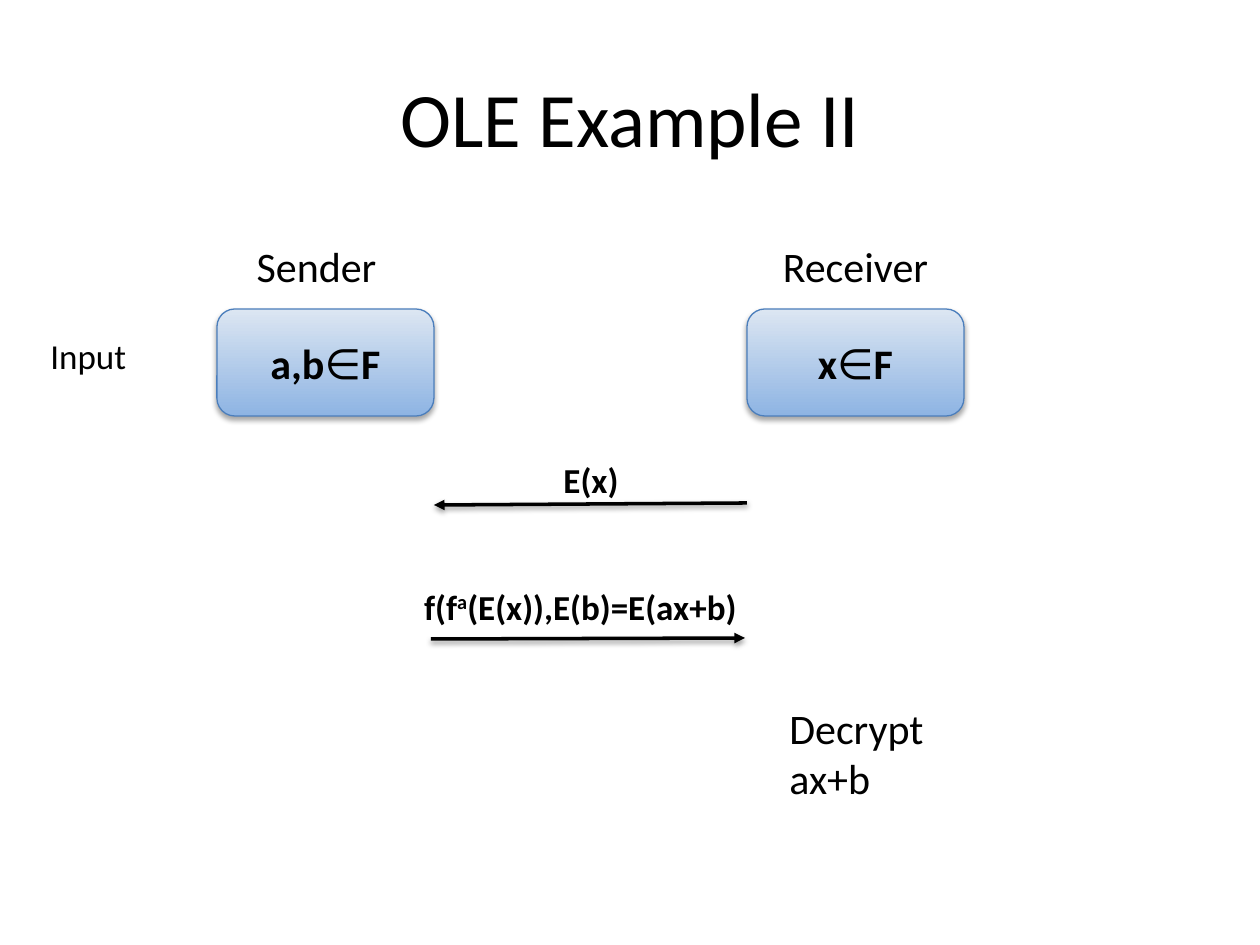
"""Build the slide 'OLE Example II': a two-party exchange between sender and receiver."""
import pptx
import pptx.util
import pptx.dml.color
import pptx.enum.shapes
import pptx.enum.text
import pptx.oxml
import pptx.oxml.ns

PX = 914400 / 126
COLORS = {"text": "000000", "bottom": "8EB4E3", "top": "DCE6F2", "edge": "4B7EBC"}
ALIGN = pptx.enum.text.PP_ALIGN
ANCHOR = pptx.enum.text.MSO_ANCHOR
AUTO = pptx.enum.text.MSO_AUTO_SIZE
RGB = pptx.dml.color.RGBColor.from_string
NS = pptx.oxml.ns.nsdecls("a")


def write(sp, *runs, size=24, bold=False, align=ALIGN.CENTER, anchor=ANCHOR.TOP,
          fit=AUTO.SHAPE_TO_FIT_TEXT, plain="", raised=""):
    tf = sp.text_frame
    tf.word_wrap = True
    tf.auto_size = fit
    tf.vertical_anchor = anchor
    p = tf.paragraphs[0]
    p.alignment = align
    for text in runs:
        r = p.add_run()
        r.text = text
        r.font.name = "Calibri"
        r.font.size = pptx.util.Pt(size)
        r.font.bold = bold and text != plain
        r.font.color.rgb = RGB(COLORS["text"])
        if text == raised:
            r.font._element.set("baseline", "30000")


def add_shadow(sp, dist, alpha):
    sp._element.spPr.append(pptx.oxml.parse_xml(
        f'<a:effectLst {NS}><a:outerShdw blurRad="{pptx.util.Pt(3.1)}" dist="{pptx.util.Pt(dist)}" '
        f'dir="5400000" rotWithShape="0"><a:srgbClr val="{COLORS["text"]}">'
        f'<a:alpha val="{alpha * 1000}"/></a:srgbClr></a:outerShdw></a:effectLst>'))


prs = pptx.Presentation()
prs.slide_width, prs.slide_height = int(1260 * PX), int(945 * PX)
s = prs.slides.add_slide(prs.slide_layouts[5])

title = s.shapes.title
title.left, title.top, title.width, title.height = (int(v * PX) for v in (63, 38, 1134, 157))
write(title, "OLE Example II", size=44, anchor=ANCHOR.MIDDLE, fit=AUTO.NONE)

labels = [
    ((163, 234, 307, 63), ["Sender"], {}),
    ((702, 234, 307, 63), ["Receiver"], {}),
    ((38, 328, 112, 55), ["Input"], {"size": 20, "align": ALIGN.LEFT}),
    ((519, 452, 144, 55), ["E(x)"], {"size": 20, "bold": True}),
    ((334, 579, 493, 55), ["f(f", "a", "(E(x)),E(b)=E(ax+b)"],
     {"size": 20, "bold": True, "raised": "a"}),
    ((777, 696, 186, 115), ["Decrypt ax+b"], {"align": ALIGN.LEFT}),
]
for box, runs, style in labels:
    sp = s.shapes.add_textbox(*(int(v * PX) for v in box))
    write(sp, *runs, **style)

for left, name in ((217, "a,b"), (747, "x")):
    sp = s.shapes.add_shape(pptx.enum.shapes.MSO_SHAPE.ROUNDED_RECTANGLE,
                            *(int(v * PX) for v in (left, 309, 217, 107)))
    sp.fill.gradient()
    sp.fill.gradient_angle = 90
    for stop, key, position in zip(sp.fill.gradient_stops, ("bottom", "top"), (0, 1)):
        stop.color.rgb = RGB(COLORS[key])
        stop.position = position
    sp.line.color.rgb = RGB(COLORS["edge"])
    sp.line.width = pptx.util.Pt(0.75)
    add_shadow(sp, 1.8, 35)
    write(sp, name, "∈", "F", bold=True, anchor=ANCHOR.MIDDLE, fit=AUTO.NONE, plain="∈")

for ends in ((747, 503, 434, 505), (431, 639, 745, 638)):
    arrow = s.shapes.add_connector(pptx.enum.shapes.MSO_CONNECTOR.STRAIGHT,
                                   *(int(v * PX) for v in ends))
    arrow.line.color.rgb = RGB(COLORS["text"])
    arrow.line.width = pptx.util.Pt(2)
    arrow.line._get_or_add_ln().append(pptx.oxml.parse_xml(f'<a:tailEnd {NS} type="triangle"/>'))
    add_shadow(arrow, 1.6, 38)

prs.save("out.pptx")
